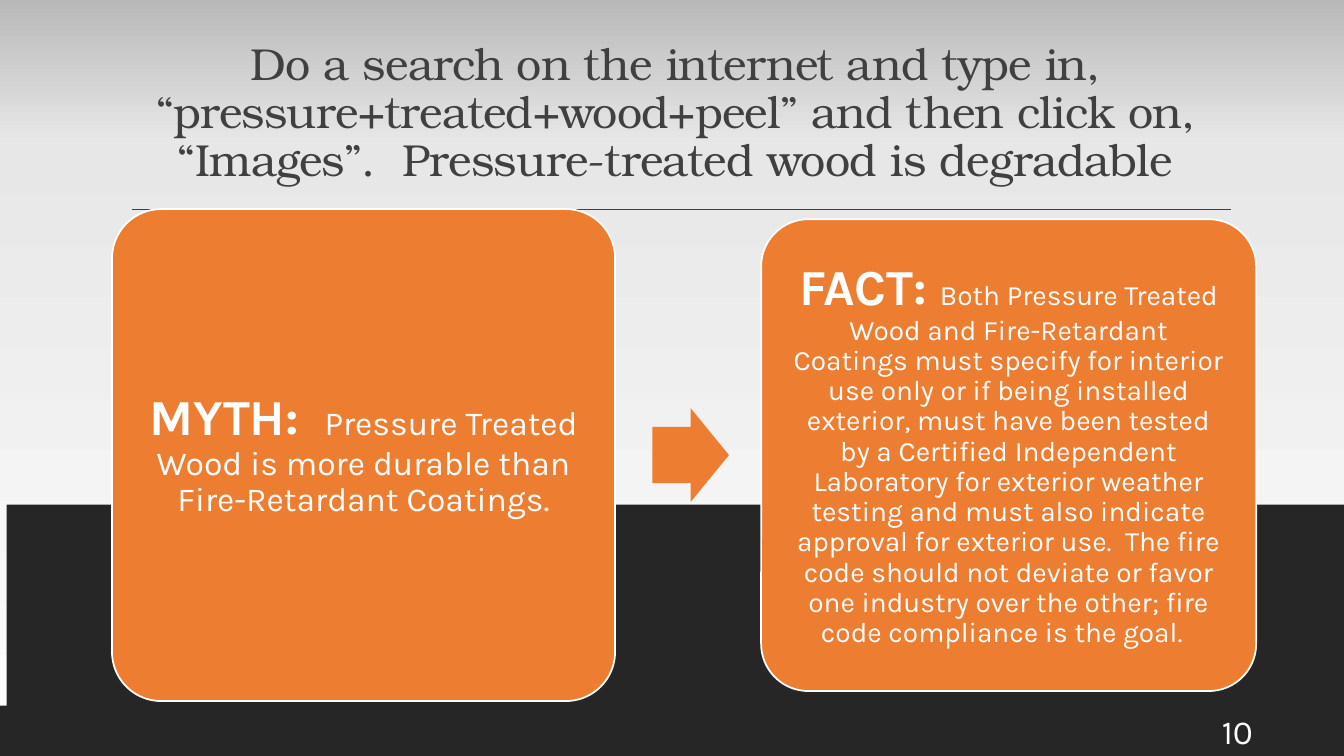
"""Build the myth and fact slide about pressure-treated wood."""
import copy
from dataclasses import dataclass

import pptx
import pptx.dml.color
import pptx.enum.shapes
import pptx.enum.text
import pptx.oxml
import pptx.oxml.ns
import pptx.util

SHAPE = pptx.enum.shapes.MSO_SHAPE
ANCHOR = pptx.enum.text.MSO_ANCHOR
ALIGN = pptx.enum.text.PP_ALIGN
SLIDE_WIDTH = pptx.util.Inches(13.33)
SLIDE_HEIGHT = pptx.util.Inches(7.5)


@dataclass(frozen=True)
class Theme:
    """Colours, fonts and type sizes of the slide."""

    sky: tuple = ((0, "FEFEFE"), (0.81, "E7E7E7"), (1, "B9B9B9"))
    ground: str = "262626"
    ink: str = "404040"
    accent: str = "ED7D31"
    light: str = "FFFFFF"
    heading_font: str = "TeX Gyre Bonum"
    body_font: str = "Karla"
    heading_size: int = 32
    label_size: int = 36
    myth_size: int = 24
    fact_size: int = 20
    number_size: int = 24


THEME = Theme()


def across(percent):
    """Return a percentage of the slide width."""
    return round(SLIDE_WIDTH * percent / 100)


def down(percent):
    """Return a percentage of the slide height."""
    return round(SLIDE_HEIGHT * percent / 100)


def frame(left, top, width, height):
    """Return a box given in percentages of the slide."""
    return across(left), down(top), across(width), down(height)


def centred(middle, width, height):
    """Return a box centred on the shared row of the myth and fact flow."""
    return frame(middle - width / 2, 60.2 - height / 2, width, height)


def rgb(code):
    """Return a colour from its hex code."""
    return pptx.dml.color.RGBColor.from_string(code)


def style(font, size, name, colour):
    """Set the size, typeface and colour of a font."""
    font.size = pptx.util.Pt(size)
    font.name = name
    font.color.rgb = rgb(colour)


def paint_background(slide):
    """Fill the background with the vertical sky gradient."""
    fill = slide.background.fill
    fill.gradient()
    fill.gradient_angle = 90
    stop_list = next(slide.element.iter(pptx.oxml.ns.qn("a:gsLst")))
    stop_list.append(copy.deepcopy(stop_list[-1]))
    for stop, (position, colour) in zip(fill.gradient_stops, THEME.sky):
        stop.position = position
        stop.color.rgb = rgb(colour)


def add_block(slide, kind, box, colour):
    """Add a plain filled shape without outline or shadow."""
    block = slide.shapes.add_shape(kind, *box)
    block.shadow.inherit = False
    block.fill.solid()
    block.fill.fore_color.rgb = rgb(colour)
    block.line.fill.background()
    return block


def add_rule(slide, left, right, height):
    """Add the thin horizontal rule below the heading."""
    rule = slide.shapes.add_connector(
        pptx.enum.shapes.MSO_CONNECTOR.STRAIGHT,
        across(left), down(height), across(right), down(height))
    rule.line.color.rgb = rgb(THEME.ink)
    rule.line.width = pptx.util.Pt(1)
    rule._element.spPr.append(pptx.oxml.parse_xml(
        f'<a:effectLst {pptx.oxml.ns.nsdecls("a")}/>'))


def add_caption(slide, box, wording, anchor, size, name, colour):
    """Add a wrapped text box and return its paragraph."""
    caption = slide.shapes.add_textbox(*box).text_frame
    caption.word_wrap = True
    caption.vertical_anchor = anchor
    paragraph = caption.paragraphs[0]
    paragraph.add_run().text = wording
    style(paragraph.font, size, name, colour)
    return paragraph


def add_heading(slide, wording):
    """Add the centred, slightly tightened heading."""
    heading = add_caption(slide, frame(9, 4.13, 82.52, 21.2), wording, ANCHOR.BOTTOM,
                          THEME.heading_size, THEME.heading_font, THEME.ink)
    heading.alignment = ALIGN.CENTER
    heading.line_spacing = 0.9
    heading.space_after = pptx.util.Pt(6)
    heading.runs[0].font._element.set("spc", "-50")


def add_card(slide, box, label, statement, size):
    """Add a rounded card with a bold label leading its statement."""
    card = add_block(slide, SHAPE.ROUNDED_RECTANGLE, box, THEME.accent)
    card.adjustments[0] = 0.1
    card.line.color.rgb = rgb(THEME.light)
    card.line.width = pptx.util.Pt(1.25)
    body = card.text_frame
    body.word_wrap = True
    body.vertical_anchor = ANCHOR.MIDDLE
    margin = pptx.util.Inches(0.15)
    body.margin_left = body.margin_right = margin
    body.margin_top = body.margin_bottom = margin
    paragraph = body.paragraphs[0]
    paragraph.alignment = ALIGN.CENTER
    paragraph.line_spacing = 0.9
    for wording, points, bold in ((label, THEME.label_size, True), (statement, size, False)):
        run = paragraph.add_run()
        run.text = wording
        run.font.bold = bold
        style(run.font, points, THEME.body_font, THEME.light)


def main():
    """Build and save the slide."""
    deck = pptx.Presentation()
    deck.slide_width, deck.slide_height = SLIDE_WIDTH, SLIDE_HEIGHT
    slide = deck.slides.add_slide(deck.slide_layouts[6])
    paint_background(slide)
    add_block(slide, SHAPE.RECTANGLE, frame(0.5, 66.75, 99.5, 33.25), THEME.ground)
    add_block(slide, SHAPE.RECTANGLE, frame(0, 93.33, 100, 6.67), THEME.ground)
    add_rule(slide, 9.83, 91.6, 27.7)
    add_heading(slide, "Do a search on the internet and type in, "
                "“pressure+treated+wood+peel” and then click on, "
                "“Images”.  Pressure-treated wood is degradable")
    add_card(slide, centred(27.05, 37.43, 65.07), "MYTH:  ",
             "Pressure Treated Wood is more durable than Fire-Retardant Coatings.",
             THEME.myth_size)
    arrow = add_block(slide, SHAPE.RIGHT_ARROW, centred(51.39, 5.7, 12.4), THEME.accent)
    arrow.adjustments[0] = 0.6
    add_card(slide, centred(75.05, 36.83, 62.4), "FACT: ",
             "Both Pressure Treated Wood and Fire-Retardant Coatings must specify for "
             "interior use only or if being installed exterior, must have been tested by a "
             "Certified Independent Laboratory for exterior weather testing and must also "
             "indicate approval for exterior use.  The fire code should not deviate or favor "
             "one industry over the other; fire code compliance is the goal.  ",
             THEME.fact_size)
    add_caption(slide, frame(90.17, 94, 6.38, 5.33), "10", ANCHOR.MIDDLE,
                THEME.number_size, THEME.body_font, THEME.light)
    deck.save("out.pptx")


if __name__ == "__main__":
    main()
